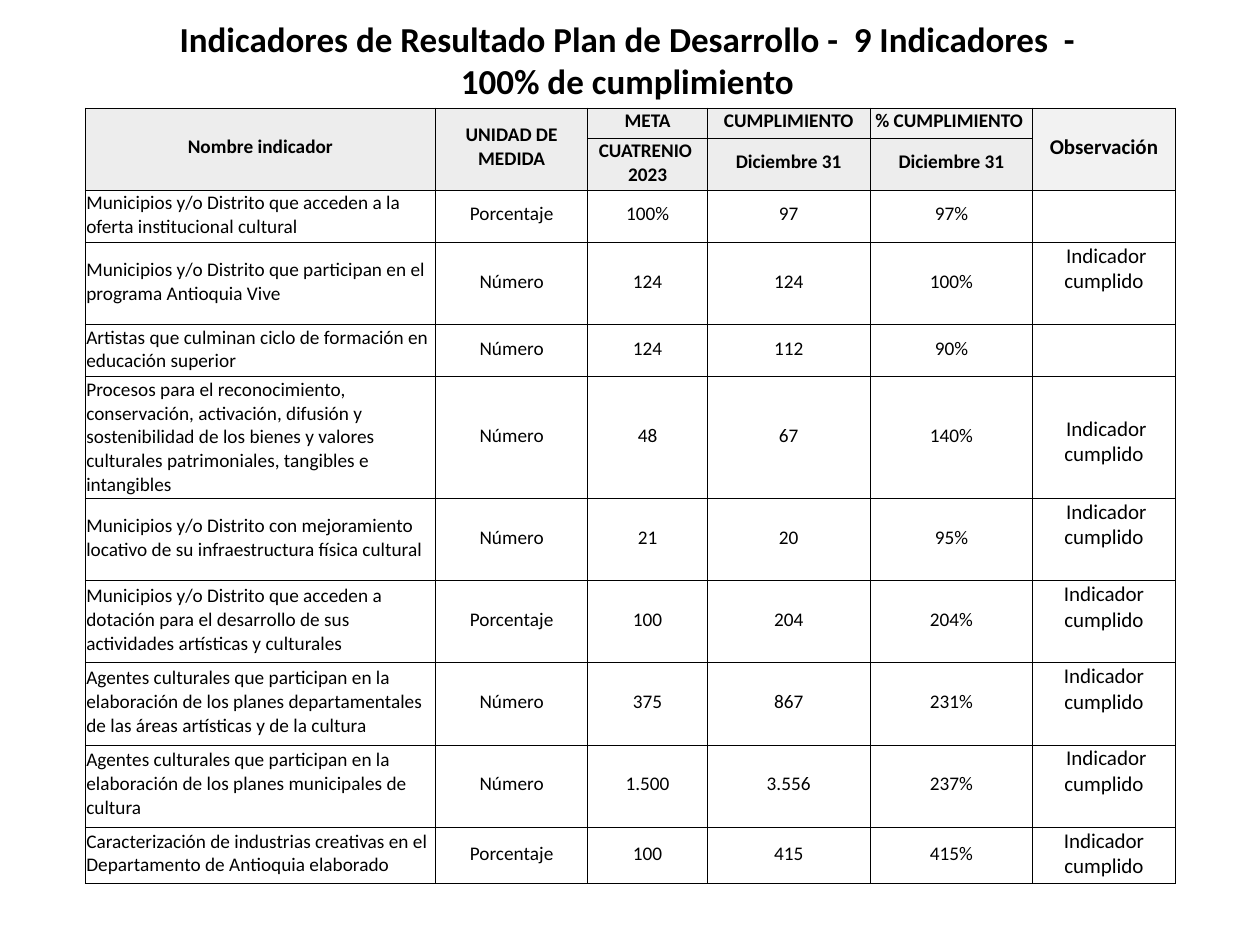
"""Build the slide of cultural result indicators for the development plan."""
from lxml import etree
from pptx import Presentation
from pptx.dml.color import RGBColor
from pptx.enum.text import MSO_ANCHOR, PP_ALIGN
from pptx.oxml.ns import qn
from pptx.util import Cm, Pt

LEFT, CENTER = PP_ALIGN.LEFT, PP_ALIGN.CENTER
MIDDLE, BOTTOM = MSO_ANCHOR.MIDDLE, MSO_ANCHOR.BOTTOM
COLORS = {"ink": "000000", "header": "EDEDED", "header_light": "F2F2F2", "body": "FFFFFF"}
FONT = "Calibri"
DONE = "Indicador cumplido"
DONE_SHIFTED = " Indicador cumplido"

COLUMN_WIDTHS = [7.06, 3.07, 2.41, 3.28, 3.28, 2.87]
ROW_HEIGHTS = [0.6, 1.05, 1.05, 1.65, 1.05, 2.44, 1.65, 1.65, 1.65, 1.65, 1.13]
HEADER_ROWS = 2
LAST_ROW = len(ROW_HEIGHTS) - 1
OBSERVATION = len(COLUMN_WIDTHS) - 1
MERGED_HEADERS = [0, 1, OBSERVATION]

ROWS = [
    ["Nombre indicador", "UNIDAD DE MEDIDA", "META", "CUMPLIMIENTO", "% CUMPLIMIENTO ", "Observación"],
    ["", "", "CUATRENIO \n2023", "Diciembre 31", "Diciembre 31", ""],
    ["Municipios y/o Distrito que acceden a la oferta institucional cultural",
     "Porcentaje", "100%", "97", "97%", ""],
    ["Municipios y/o Distrito que participan en el programa Antioquia Vive",
     "Número", "124", "124", "100%", DONE_SHIFTED],
    ["Artistas que culminan ciclo de formación en educación superior",
     "Número", "124", "112", "90%", ""],
    ["Procesos para el reconocimiento, conservación, activación, difusión y sostenibilidad "
     "de los bienes y valores culturales patrimoniales, tangibles e intangibles",
     "Número", "48", "67", "140%", DONE_SHIFTED],
    ["Municipios y/o Distrito con mejoramiento locativo de su infraestructura física cultural",
     "Número", "21", "20", "95%", DONE_SHIFTED],
    ["Municipios y/o Distrito que acceden a dotación para el desarrollo de sus actividades "
     "artísticas y culturales",
     "Porcentaje", "100", "204", "204%", DONE],
    ["Agentes culturales que participan en la elaboración de los planes departamentales "
     "de las áreas artísticas y de la cultura",
     "Número", "375", "867", "231%", DONE],
    ["Agentes culturales que participan en la elaboración de los planes municipales de cultura",
     "Número", "1.500", "3.556", "237%", DONE_SHIFTED],
    ["Caracterización de industrias creativas en el Departamento de Antioquia elaborado",
     "Porcentaje", "100", "415", "415%", DONE],
]


def write(frame, text, size=11, bold=False, align=CENTER):
    frame.word_wrap = True
    frame.text = text
    for paragraph in frame.paragraphs:
        paragraph.alignment = align
        for run in paragraph.runs:
            run.font.name = FONT
            run.font.size = Pt(size)
            run.font.bold = bold
            run.font.color.rgb = RGBColor.from_string(COLORS["ink"])


def add_borders(cell):
    properties = cell._tc.get_or_add_tcPr()
    for side in ("a:lnL", "a:lnR", "a:lnT", "a:lnB"):
        line = etree.SubElement(properties, qn(side), w=str(Pt(0.5)))
        fill = etree.SubElement(line, qn("a:solidFill"))
        etree.SubElement(fill, qn("a:srgbClr"), val=COLORS["ink"])


presentation = Presentation()
presentation.slide_width, presentation.slide_height = Cm(25.4), Cm(19.05)
slide = presentation.slides.add_slide(presentation.slide_layouts[6])

title = slide.shapes.add_textbox(Cm(2.72), Cm(0.23), Cm(19.86), Cm(1.96))
write(title.text_frame,
      "Indicadores de Resultado Plan de Desarrollo -  9 Indicadores  - 100% de cumplimiento",
      size=20, bold=True)

indicators = slide.shapes.add_table(
    len(ROWS), len(COLUMN_WIDTHS), Cm(1.72), Cm(2.18),
    Cm(sum(COLUMN_WIDTHS)), Cm(sum(ROW_HEIGHTS))).table
indicators.first_row = False
indicators.horz_banding = False
for column, width in zip(indicators.columns, COLUMN_WIDTHS):
    column.width = Cm(width)
for row, height in zip(indicators.rows, ROW_HEIGHTS):
    row.height = Cm(height)

for r, values in enumerate(ROWS):
    is_header = r < HEADER_ROWS
    for c, value in enumerate(values):
        cell = indicators.cell(r, c)
        raised = c == OBSERVATION and HEADER_ROWS <= r < LAST_ROW
        cell.margin_left = cell.margin_right = cell.margin_top = Cm(0.02)
        cell.margin_bottom = Cm(0.62 if raised and value else 0.1)
        cell.vertical_anchor = BOTTOM if raised else MIDDLE
        write(cell.text_frame, value, size=12 if c == OBSERVATION else 11, bold=is_header,
              align=LEFT if c == 0 and not is_header else CENTER)
        add_borders(cell)
        light = c == OBSERVATION or (r, c) == (0, 4)
        shade = ("header_light" if light else "header") if is_header else "body"
        cell.fill.solid()
        cell.fill.fore_color.rgb = RGBColor.from_string(COLORS[shade])

for c in MERGED_HEADERS:
    indicators.cell(0, c).merge(indicators.cell(1, c))

presentation.save("out.pptx")
